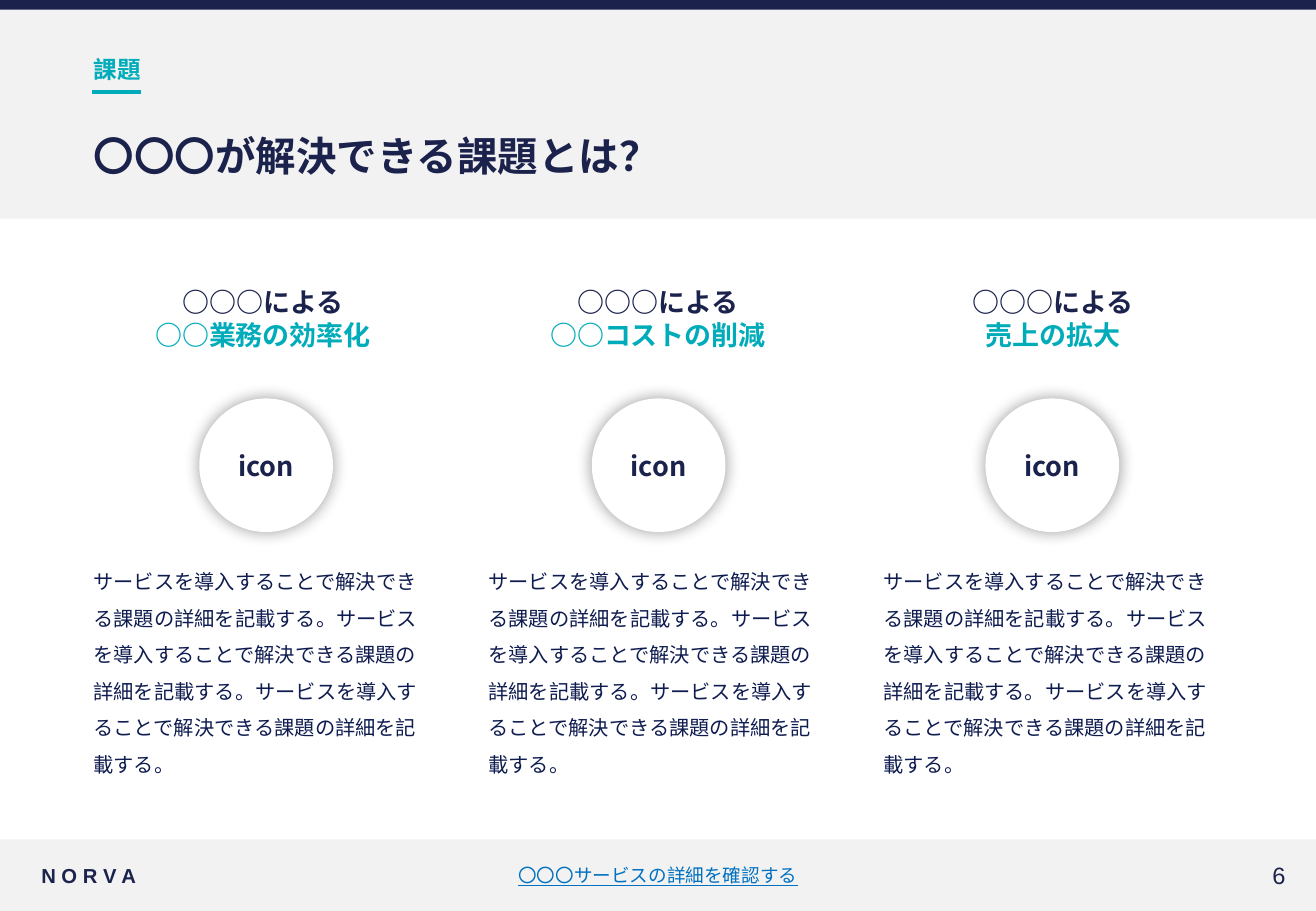
from lxml.etree import SubElement
from pptx import Presentation
from pptx.dml.color import RGBColor
from pptx.enum.shapes import MSO_CONNECTOR, MSO_SHAPE
from pptx.enum.text import MSO_ANCHOR, MSO_AUTO_SIZE, PP_ALIGN
from pptx.oxml.ns import qn
from pptx.util import Inches, Pt

WIDTH, HEIGHT = Inches(10.83), Inches(7.5)
NAVY, TEAL, GREY, WHITE = "1B224C", "00ACBA", "F2F2F2", "FFFFFF"
INK, BLUE = "0F1C50", "0070C0"
SANS, ARIAL = "Noto Sans CJK JP", "Arial"
LEFT, PITCH, COL = 6.74, 30.01, 26.5
DETAIL = "サービスを導入することで解決できる課題の詳細を記載する。" * 3
TOPICS = [
    ("○○○による", "○○業務の効率化", 15.14),
    ("○○○による", "○○コストの削減", 44.97),
    ("○○○による", "売上の拡大", 74.88),
]


def color(code):
    """Turn a hex string into a colour."""
    return RGBColor.from_string(code)


def place(x, y, w, h):
    """Turn percentages of the slide into lengths."""
    return (round(WIDTH * x / 100), round(HEIGHT * y / 100),
            round(WIDTH * w / 100), round(HEIGHT * h / 100))


def style(para, size, code, bold=False, face=SANS, align=PP_ALIGN.LEFT):
    """Format a whole paragraph."""
    font = para.font
    font.size, font.bold, font.name = Pt(size), bold, face
    font.color.rgb = color(code)
    para.alignment = align
    SubElement(font._element, qn("a:ea"), typeface=SANS)


def setup(frame, anchor, inset=0.04):
    """Set wrapping, anchor and insets of a text frame."""
    frame.word_wrap = True
    frame.auto_size = MSO_AUTO_SIZE.NONE
    frame.vertical_anchor = anchor
    frame.margin_left = frame.margin_right = Inches(inset)
    frame.margin_top = frame.margin_bottom = Inches(0.04)


def label(slide, area, text, size, code, anchor=MSO_ANCHOR.MIDDLE, **look):
    """Add a text box with one paragraph and return the paragraph."""
    frame = slide.shapes.add_textbox(*place(*area)).text_frame
    setup(frame, anchor)
    para = frame.paragraphs[0]
    para.text = text
    style(para, size, code, **look)
    return para


def solid(slide, kind, area, code):
    """Add a plain filled shape."""
    shape = slide.shapes.add_shape(kind, *place(*area))
    shape.shadow.inherit = False
    shape.fill.solid()
    shape.fill.fore_color.rgb = color(code)
    shape.line.fill.background()
    return shape


def rule(slide, x, y, end):
    """Draw the accent line under the section name."""
    left, top, right, _ = place(x, y, end, 0)
    line = slide.shapes.add_connector(
        MSO_CONNECTOR.STRAIGHT, left, top, right, top)
    line.line.color.rgb = color(TEAL)
    line.line.width = Pt(2.5)
    SubElement(line._element.spPr, qn("a:effectLst"))


def holder(slide, shape, area, text, size, code, anchor):
    """Move a placeholder to the front, fill and format it."""
    slide.shapes._spTree.append(shape._element)
    shape.left, shape.top, shape.width, shape.height = place(*area)
    setup(shape.text_frame, anchor)
    para = shape.text_frame.paragraphs[0]
    para.text = text
    para.space_before = Pt(0)
    style(para, size, code, bold=True)
    props = para._p.get_or_add_pPr()
    props.set("marL", "0")
    props.set("indent", "0")
    props.insert(props.index(para.font._element),
                 props.makeelement(qn("a:buNone"), {}))


def icon(slide, x):
    """Add a white disc with a soft glow of shadow."""
    disc = solid(slide, MSO_SHAPE.OVAL, (x, 43.73, 10.16, 14.67), WHITE)
    glow = SubElement(disc._element.spPr.find(qn("a:effectLst")),
                      qn("a:outerShdw"), blurRad=str(Pt(10)), dist="0",
                      dir="0", algn="ctr", rotWithShape="0")
    tint = SubElement(glow, qn("a:srgbClr"), val="000000")
    SubElement(tint, qn("a:alpha"), val="40000")
    setup(disc.text_frame, MSO_ANCHOR.MIDDLE)
    para = disc.text_frame.paragraphs[0]
    para.text = "icon"
    style(para, 16, NAVY, bold=True, align=PP_ALIGN.CENTER)


def topic(slide, x, lead, key, spot):
    """Add one column: heading, icon and detail."""
    head = label(slide, (x, 28.4, COL, 13.07), lead, 16, NAVY,
                 bold=True, align=PP_ALIGN.CENTER)
    head.add_line_break()
    run = head.add_run()
    run.text = key
    run.font.color.rgb = color(TEAL)
    icon(slide, spot)
    body = label(slide, (x, 60.67, COL, 26.27), DETAIL, 12, INK,
                 anchor=MSO_ANCHOR.TOP, face=ARIAL)
    body.line_spacing = 1.5
    body.space_after = Pt(4.3)


def footer(slide):
    """Add the name, the link text and the page number."""
    label(slide, (2.77, 94, 9.88, 4.13), "N O R V A", 12, NAVY,
          bold=True, face=ARIAL)
    link = label(slide, (30.47, 94, 39.06, 4.13),
                 "〇〇〇サービスの詳細を確認する", 11, BLUE,
                 face=ARIAL, align=PP_ALIGN.CENTER)
    link.font.underline = True
    label(slide, (88.18, 94, 9.88, 4.13), "6", 14, NAVY,
          face=ARIAL, align=PP_ALIGN.RIGHT)


def main():
    """Build and save the slide."""
    deck = Presentation()
    deck.slide_width, deck.slide_height = WIDTH, HEIGHT
    slide = deck.slides.add_slide(deck.slide_layouts[1])
    for top, high, code in ((92.13, 7.87, GREY), (0, 24, GREY),
                            (0, 1.07, NAVY)):
        solid(slide, MSO_SHAPE.RECTANGLE, (0, top, 100, high), code)
    rule(slide, 7.02, 10.13, 10.71)
    footer(slide)
    holder(slide, slide.placeholders[1], (LEFT, 5.47, 86.52, 3.73),
           "課題", 14, TEAL, MSO_ANCHOR.TOP)
    holder(slide, slide.shapes.title, (LEFT, 13.07, 86.52, 7.87),
           "〇〇〇が解決できる課題とは？", 24, NAVY, MSO_ANCHOR.MIDDLE)
    for i, (lead, key, spot) in enumerate(TOPICS):
        topic(slide, LEFT + i * PITCH, lead, key, spot)
    deck.save("out.pptx")


if __name__ == "__main__":
    main()
